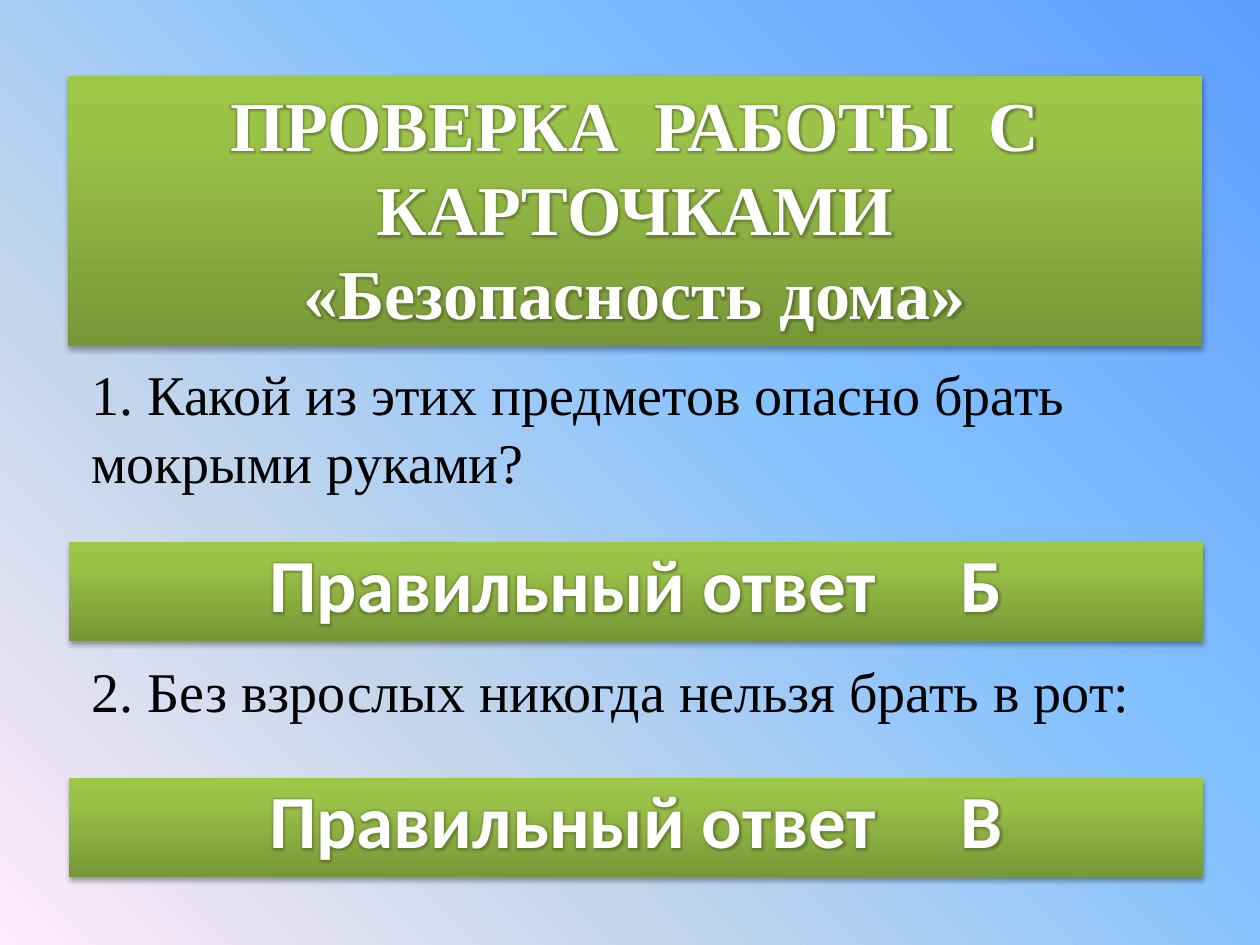
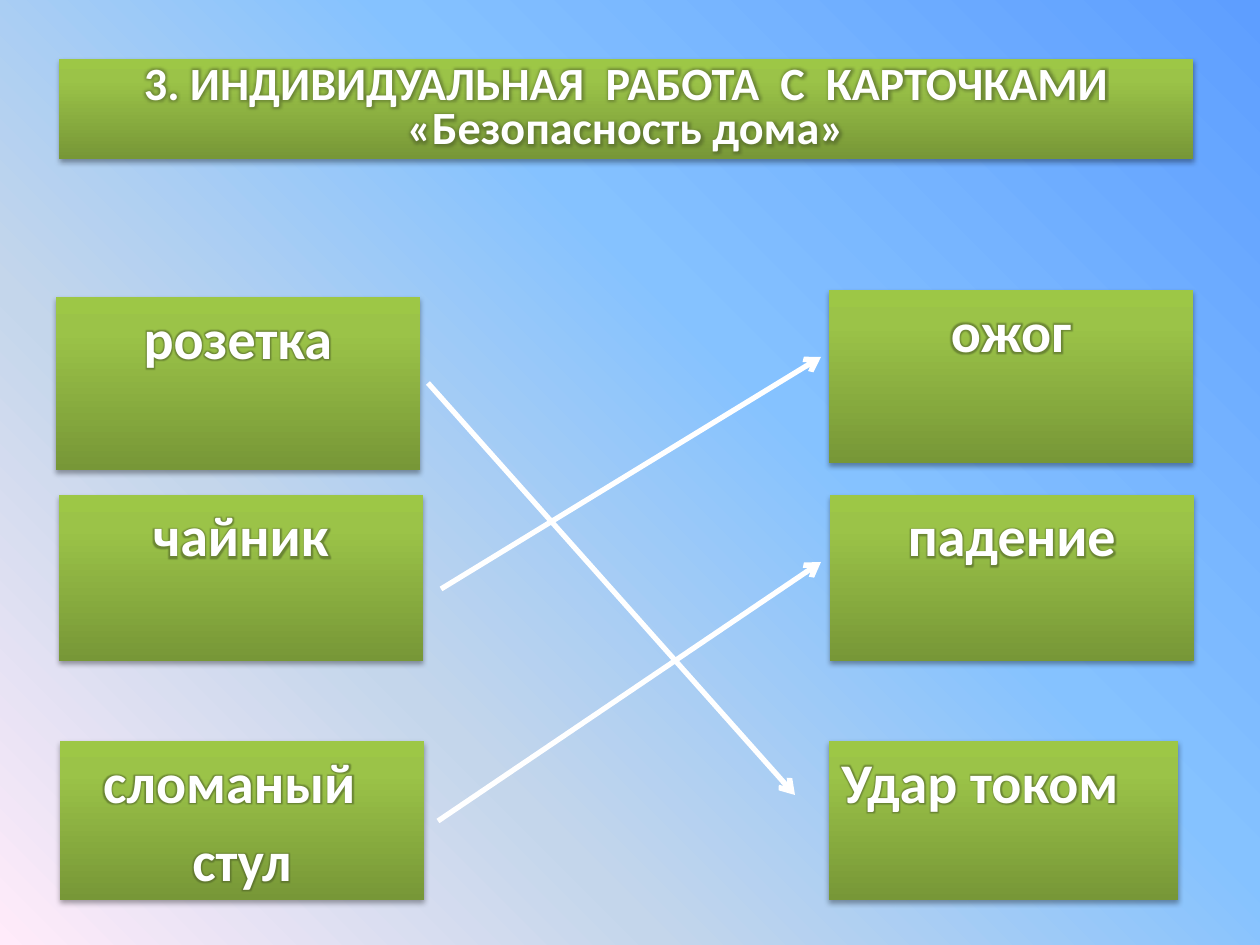
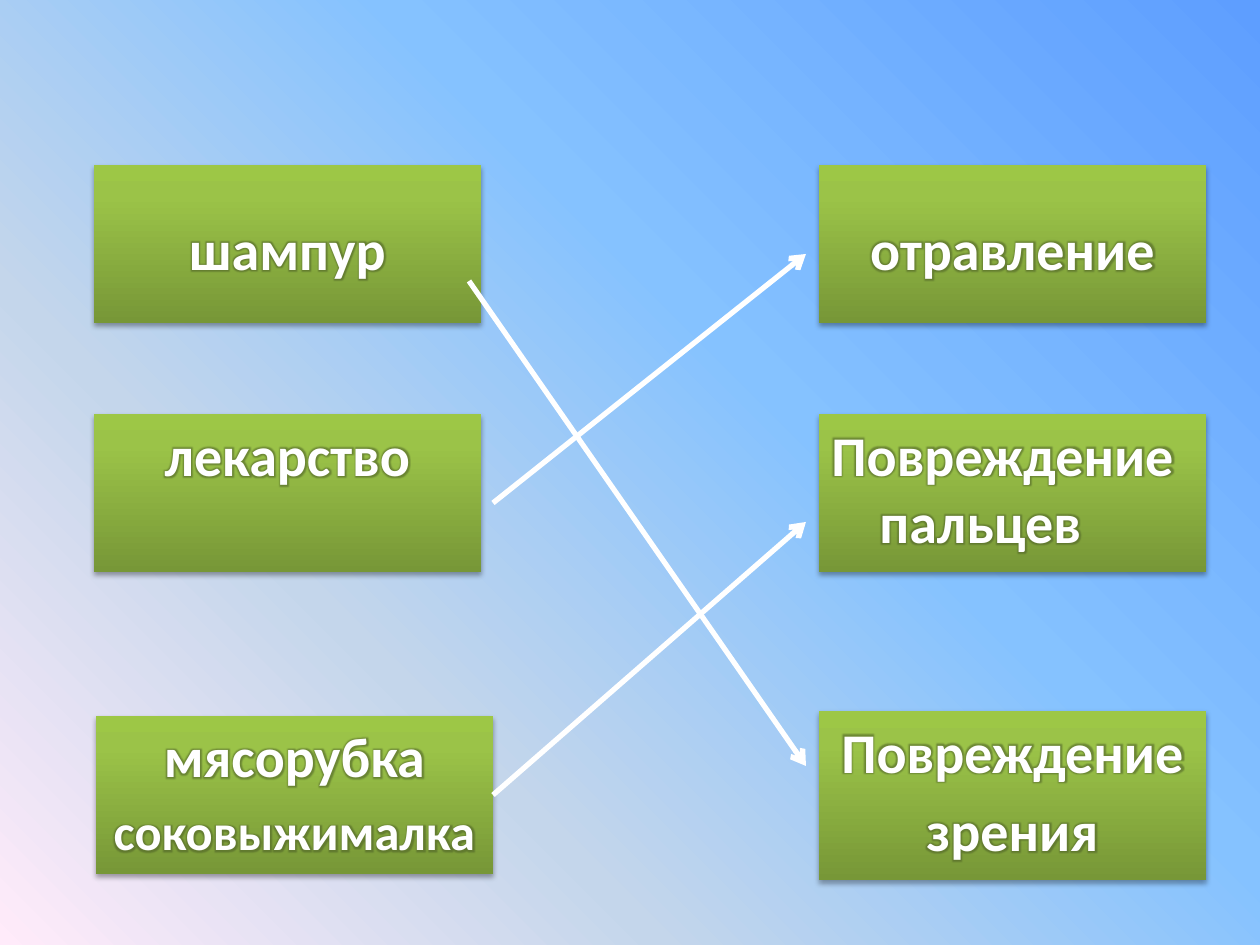
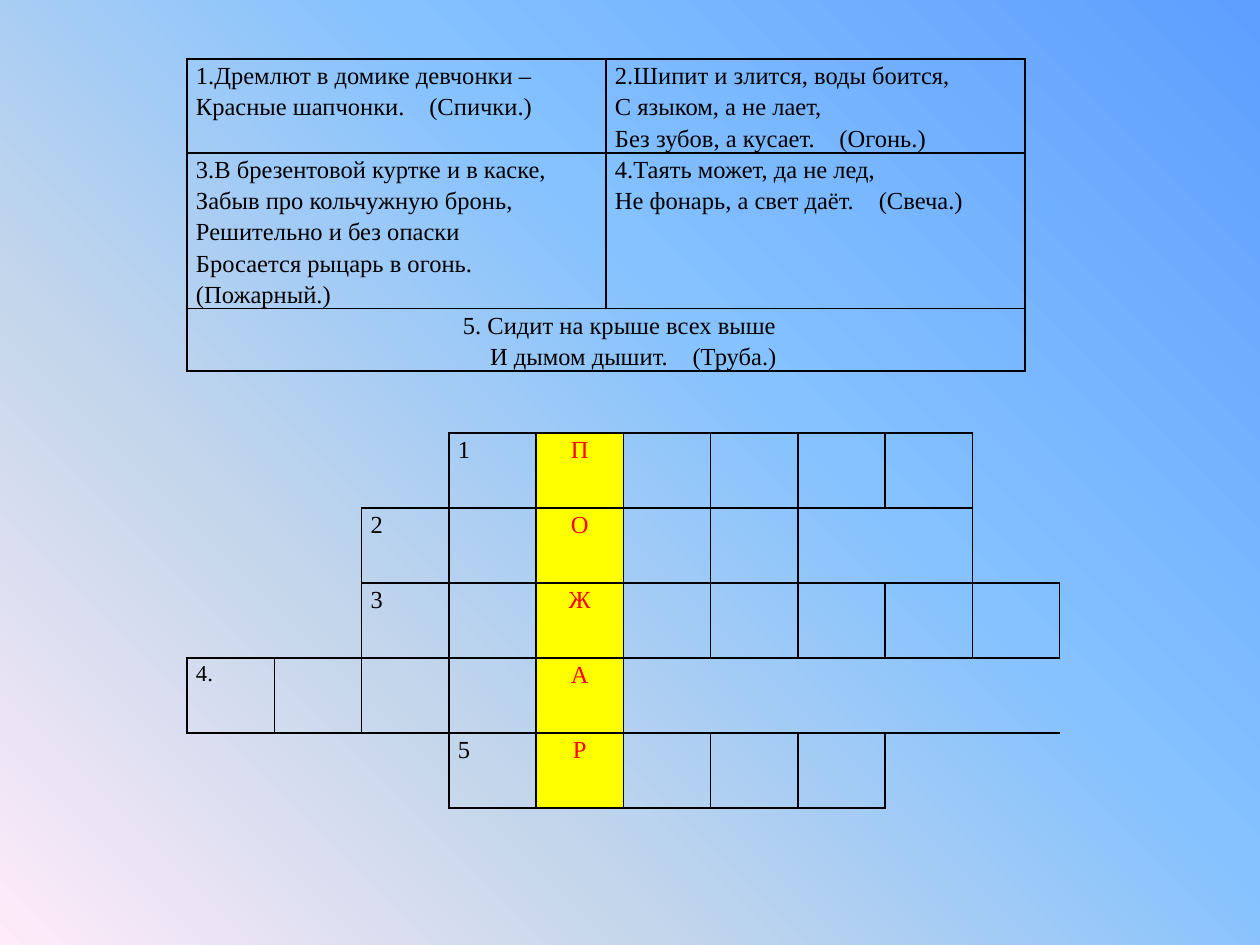
from pptx import Presentation
from pptx.dml.color import RGBColor
from pptx.enum.shapes import MSO_CONNECTOR, MSO_SHAPE
from pptx.enum.text import MSO_ANCHOR, MSO_AUTO_SIZE, PP_ALIGN
from pptx.oxml import parse_xml
from pptx.oxml.ns import nsdecls, qn
from pptx.util import Inches, Pt

PX = Inches(10) / 1260
NS = nsdecls("a")

COLORS = {
    "white": "FFFFFF",
    "black": "000000",
    "red": "FF0000",
    "yellow": "FFFF00",
    "halo": "4F6228",
}
BACKGROUND = [(0, "5E9EFF"), (40, "85C2FF"), (70, "C4D6EB"), (100, "FFEBFA")]
GREEN = [(0, "779737"), (80, "9BC348"), (100, "9DC746")]

# A tab in a text stands for one widened space; "gap" is its extra width in points.
CARD = {
    "name": "Calibri", "size": 32, "bold": True, "color": "white",
    "alignment": PP_ALIGN.CENTER, "line_spacing": 1.0, "space_before": Pt(6.4),
    "marL": 48, "indent": -48, "gap": 0,
}
FLAT = CARD | {"marL": 0, "indent": 0, "space_before": Pt(0)}
MAIN_TITLE = FLAT | {"name": "Times New Roman", "size": 40, "gap": 10}
TASK_TITLE = FLAT | {"size": 26.4, "line_spacing": 0.8, "gap": 6}
ANSWER = FLAT | {"size": 42.9, "line_spacing": 0.9, "gap": 38.8}
QUESTION = MAIN_TITLE | {"size": 32, "bold": False, "color": "black", "alignment": PP_ALIGN.LEFT}
RIDDLE = QUESTION | {"size": 14, "line_spacing": 1.15, "gap": 10.5}
LEFT_CARD = CARD | {"alignment": PP_ALIGN.LEFT}
LOW_CARD = CARD | {"top_inset": 49}
KEY_LETTER = RIDDLE | {"color": "red", "alignment": PP_ALIGN.CENTER}


def paint_gradient(parent, stops, degrees):
    """Replace the solid fill inside parent with a linear gradient."""
    marks = "".join(
        f'<a:gs pos="{position * 1000}"><a:srgbClr val="{color}"/></a:gs>' for position, color in stops)
    gradient = parse_xml(
        f'<a:gradFill {NS} rotWithShape="1"><a:gsLst>{marks}</a:gsLst>'
        f'<a:lin ang="{degrees * 60000}" scaled="0"/></a:gradFill>')
    solid = parent.find(qn("a:solidFill"))
    parent.replace(solid, gradient)


def write(frame, lines, look):
    """Fill a text frame; a line is a text, or a text with changes to the look."""
    for number, line in enumerate(lines):
        text, changes = (line, {}) if isinstance(line, str) else line
        style = look | changes
        paragraph = frame.add_paragraph() if number else frame.paragraphs[0]
        for key in ("alignment", "line_spacing"):
            setattr(paragraph, key, style[key])
        paragraph.space_before = style["space_before"] if number else Pt(0)
        properties = paragraph._p.get_or_add_pPr()
        for key in ("marL", "marR", "indent"):
            properties.set(key, str(round(style.get(key, 0) * PX)))
        pieces = text.replace("\t", "\t \t").split("\t")
        for piece in pieces:
            run = paragraph.add_run()
            run.text = piece
            for key, value in {"size": Pt(style["size"]), "bold": style["bold"], "name": style["name"]}.items():
                setattr(run.font, key, value)
            run.font.color.rgb = RGBColor.from_string(COLORS[style["color"]])
            run_properties = run._r.get_or_add_rPr()
            if piece == " ":
                run_properties.set("spc", str(round(style["gap"] * 100)))
            if style["color"] == "white":
                run_properties.insert(1, parse_xml(
                    f'<a:effectLst {NS}><a:glow rad="53100"><a:srgbClr val="{COLORS["halo"]}">'
                    f'<a:alpha val="60000"/></a:srgbClr></a:glow></a:effectLst>'))


presentation = Presentation()
presentation.slide_width, presentation.slide_height = Inches(10), Inches(7.5)
master = presentation.slide_master
master.background.fill.solid()
paint_gradient(master._element.cSld.find(qn("p:bg")).find(qn("p:bgPr")), BACKGROUND, 135)
TITLE_ONLY, BLANK = presentation.slide_layouts[5], presentation.slide_layouts[6]

# Each item: kind, box (left, top, width, height), look, lines
card_slides = [
    {"items": [
        ("title", (68, 76, 1134, 270), MAIN_TITLE,
         ["ПРОВЕРКА\tРАБОТЫ\tС\tКАРТОЧКАМИ", "«Безопасность дома»"]),
        ("text", (79, 354, 1082, 149), QUESTION,
         ["1. Какой из этих предметов опасно брать мокрыми руками?"]),
        ("card", (69, 542, 1134, 99), ANSWER, ["Правильный ответ\tБ"]),
        ("line", (79, 650, 1073, 81), QUESTION, ["2. Без взрослых никогда нельзя брать в рот:"]),
        ("card", (69, 778, 1134, 99), ANSWER, ["Правильный ответ\tВ"]),
    ], "arrows": []},
    {"items": [
        ("title", (59, 59, 1134, 100), TASK_TITLE,
         ["3. ИНДИВИДУАЛЬНАЯ\tРАБОТА\tС\tКАРТОЧКАМИ", "«Безопасность дома»"]),
        ("card", (829, 290, 364, 173), CARD, ["ожог"]),
        ("card", (830, 495, 364, 166), CARD, ["падение"]),
        ("card", (829, 741, 349, 159), LEFT_CARD, ["Удар током"]),
        ("card", (56, 297, 364, 173), CARD, ["розетка"]),
        ("card", (59, 495, 364, 166), CARD, ["чайник"]),
        ("card", (60, 741, 364, 159), CARD, [("сломаный", {"marR": 25}), "стул"]),
    ], "arrows": [(428, 383, 795, 795), (441, 589, 821, 357), (438, 821, 821, 562)]},
    {"items": [
        ("card", (819, 165, 387, 158), LOW_CARD, ["отравление"]),
        ("card", (819, 414, 387, 158), LEFT_CARD, ["Повреждение пальцев"]),
        ("card", (819, 711, 387, 169), CARD, ["Повреждение", "зрения"]),
        ("card", (94, 165, 387, 158), LOW_CARD, ["шампур"]),
        ("card", (94, 414, 387, 158), CARD, ["лекарство"]),
        ("card", (96, 716, 397, 158), CARD,
         [("мясорубка", {"size": 31.9}), ("соковыжималка", {"size": 28.8})]),
    ], "arrows": [(469, 281, 806, 766), (493, 503, 806, 254), (493, 795, 806, 522)]},
]

for content in card_slides:
    has_title = content["items"][0][0] == "title"
    slide = presentation.slides.add_slide(TITLE_ONLY if has_title else BLANK)
    for kind, box, look, lines in content["items"]:
        place = [round(length * PX) for length in box]
        if kind == "title":
            shape = slide.shapes.title
            for key, value in zip(("left", "top", "width", "height"), place):
                setattr(shape, key, value)
        elif kind == "card":
            shape = slide.shapes.add_shape(MSO_SHAPE.RECTANGLE, *place)
        else:
            shape = slide.shapes.add_textbox(*place)
        frame = shape.text_frame
        frame_format = {
            "word_wrap": kind != "line",
            "auto_size": MSO_AUTO_SIZE.NONE,
            "vertical_anchor": MSO_ANCHOR.MIDDLE if kind == "line" else MSO_ANCHOR.TOP,
            "margin_top": round(look.get("top_inset", 6) * PX),
        }
        for key, value in frame_format.items():
            setattr(frame, key, value)
        write(frame, lines, look)
        if kind in ("title", "card"):
            shape.fill.solid()
            paint_gradient(shape._element.spPr, GREEN, 270)
            shape.line.fill.background()
            shape.shadow.inherit = False
            shape._element.spPr.find(qn("a:effectLst")).append(parse_xml(
                f'<a:outerShdw {NS} blurRad="40000" dist="23000" dir="5400000" rotWithShape="0">'
                f'<a:srgbClr val="{COLORS["black"]}"><a:alpha val="35000"/></a:srgbClr></a:outerShdw>'))
    for ends in content["arrows"]:
        arrow = slide.shapes.add_connector(MSO_CONNECTOR.STRAIGHT, *[round(end * PX) for end in ends])
        arrow.line.width = Pt(3)
        arrow.line.color.rgb = RGBColor.from_string(COLORS["white"])
        arrow_properties = arrow._element.spPr
        arrow_properties.find(qn("a:ln")).append(parse_xml(f'<a:tailEnd {NS} type="arrow"/>'))
        arrow_properties.append(parse_xml(f"<a:effectLst {NS}/>"))

# Crossword words: number, first column, last column, key letter
words = [("1", 3, 8, "П"), ("2", 2, 8, "О"), ("3", 2, 9, "Ж"), ("4.", 0, 4, "А"), ("5", 3, 7, "Р")]
KEY_COLUMN = 4
crossword = {}
for row, (number, first, last, letter) in enumerate(words):
    for column in range(first, last + 1):
        crossword[row, column] = ([], RIDDLE)
    crossword[row, first] = ([(number, {"size": 13 if number == "4." else 14})], RIDDLE)
    crossword[row, KEY_COLUMN] = ([letter], KEY_LETTER)

riddles = {
    (0, 0): (["1.Дремлют в домике девчонки –", "Красные шапчонки.\t(Спички.)"], RIDDLE),
    (0, 1): (["2.Шипит и злится, воды боится,", "С языком, а не лает,",
              "Без зубов, а кусает.\t(Огонь.)"], RIDDLE),
    (1, 0): (["3.В брезентовой куртке и в каске,", "Забыв про кольчужную бронь,",
              "Решительно и без опаски", "Бросается рыцарь в огонь.\t(Пожарный.)"], RIDDLE),
    (1, 1): (["4.Таять может, да не лед,", "Не фонарь, а свет даёт.\t(Свеча.)"], RIDDLE),
    (2, 0): ([("5. Сидит на крыше всех выше", {"marL": 267}),
              ("И дымом дышит.\t(Труба.)", {"marL": 294})], RIDDLE),
    (2, 1): ([], RIDDLE),
}

# Each table: left, top, width, row heights, column count, merged ranges, cells
tables = [
    (187, 433, 873, [75] * 5, 10,
     [(0, 0, 0, 2), (0, 9, 1, 9), (1, 0, 2, 1), (1, 7, 1, 8), (3, 5, 3, 9), (4, 0, 4, 2), (4, 8, 4, 9)],
     crossword),
    (187, 59, 838, [94, 155, 62], 2, [(2, 0, 2, 1)], riddles),
]
slide = presentation.slides.add_slide(BLANK)
for left, top, width, heights, column_count, merges, cells in tables:
    place = [round(length * PX) for length in (left, top, width, sum(heights))]
    table = slide.shapes.add_table(len(heights), column_count, *place).table
    table.first_row = table.horz_banding = False
    table._tbl.tblPr.find(qn("a:tableStyleId")).text = "{2D5ABB26-0587-4C30-8999-92F81FD0307C}"
    for row, height in zip(table.rows, heights):
        row.height = round(height * PX)
    for first_row, first_column, last_row, last_column in merges:
        table.cell(first_row, first_column).merge(table.cell(last_row, last_column))
    for cell in table.iter_cells():
        cell.fill.background()
    for (row, column), (lines, look) in cells.items():
        cell = table.cell(row, column)
        for side, margin in {"left": 9, "right": 9, "top": 0, "bottom": 0}.items():
            setattr(cell, f"margin_{side}", round(margin * PX))
        if look is KEY_LETTER:
            cell.fill.solid()
            cell.fill.fore_color.rgb = RGBColor.from_string(COLORS["yellow"])
        write(cell.text_frame, lines, look)
        for order, side in enumerate("LRTB"):
            cell._tc.get_or_add_tcPr().insert(order, parse_xml(
                f'<a:ln{side} {NS} w="12700"><a:solidFill><a:srgbClr val="{COLORS["black"]}"/>'
                f'</a:solidFill></a:ln{side}>'))

presentation.save("out.pptx")
